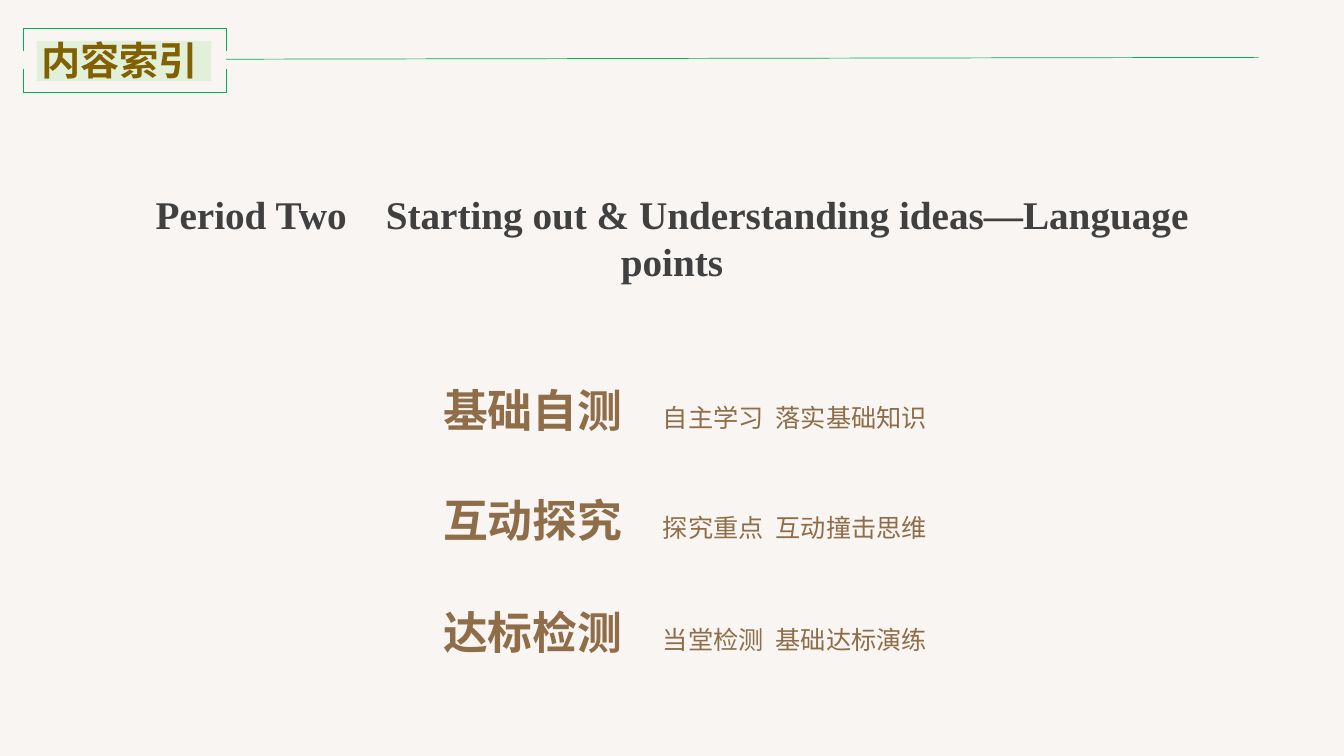
"""Build the contents slide for Period Two."""
from lxml import etree
from pptx import Presentation
from pptx.dml.color import RGBColor
from pptx.enum.shapes import MSO_CONNECTOR, MSO_SHAPE
from pptx.enum.text import MSO_ANCHOR, MSO_AUTO_SIZE, PP_ALIGN
from pptx.oxml.ns import qn
from pptx.util import Pt

STRAIGHT = MSO_CONNECTOR.STRAIGHT
RECTANGLE = MSO_SHAPE.RECTANGLE
TOP = MSO_ANCHOR.TOP
GROW = MSO_AUTO_SIZE.SHAPE_TO_FIT_TEXT
CENTER = PP_ALIGN.CENTER

COLORS = {
    "background": "F8F5F3",
    "title": "404040",
    "section": "8E6D48",
    "header": "806000",
    "highlight": "E2F0D9",
    "line": "00B050",
}
CHINESE_FONT = "Noto Sans CJK SC"


def add_run(paragraph, text, font_name, size, color, bold):
    """Append a formatted run with a Chinese font."""
    run = paragraph.add_run()
    run.text = text
    formats = {"name": font_name, "size": Pt(size), "bold": bold}
    for attribute, value in formats.items():
        setattr(run.font, attribute, value)
    run.font.color.rgb = RGBColor.from_string(COLORS[color])
    east_asian = etree.SubElement(run.font._element, qn("a:ea"))
    east_asian.set("typeface", CHINESE_FONT)


def add_text_box(left, top, width, height):
    """Add a wrapping text box and return its first paragraph."""
    box = slide.shapes.add_textbox(Pt(left), Pt(top), Pt(width), Pt(height))
    box.text_frame.word_wrap = True
    box.text_frame.auto_size = GROW
    return box.text_frame.paragraphs[0]


presentation = Presentation()
presentation.slide_width = Pt(960)
presentation.slide_height = Pt(540)
slide = presentation.slides.add_slide(presentation.slide_layouts[5])
slide.background.fill.solid()
slide.background.fill.fore_color.rgb = RGBColor.from_string(COLORS["background"])

title = slide.shapes.title
title_box = {"left": 66, "top": 132.5, "width": 828, "height": 41}
for attribute, value in title_box.items():
    setattr(title, attribute, Pt(value))
title_frame = title.text_frame
title_formats = {"word_wrap": True, "auto_size": GROW, "vertical_anchor": TOP}
for attribute, value in title_formats.items():
    setattr(title_frame, attribute, value)
title_paragraph = title_frame.paragraphs[0]
title_paragraph.alignment = CENTER
add_run(
    title_paragraph,
    "Period Two Starting out & Understanding ideas—Language points".replace("Two ", "Two　"),
    "Times New Roman", 28, "title", True,
)

sections = [
    (270, "基础自测", "自主学习", "落实基础知识"),
    (348.5, "互动探究", "探究重点", "互动撞击思维"),
    (428.5, "达标检测", "当堂检测", "基础达标演练"),
]
for top, name, method, goal in sections:
    paragraph = add_text_box(309.5, top, 390, 46)
    tab_list = etree.SubElement(paragraph._p.get_or_add_pPr(), qn("a:tabLst"))
    for position in (157, 237.5):
        tab = etree.SubElement(tab_list, qn("a:tab"))
        tab.set("pos", str(Pt(position)))
        tab.set("algn", "l")
    add_run(paragraph, f"{name}\t", "Arial", 32, "section", True)
    add_run(paragraph, f"{method}\t{goal}", "Arial", 18, "section", False)

highlight = slide.shapes.add_shape(RECTANGLE, Pt(26.3), Pt(29.2), Pt(124.6), Pt(28.8))
highlight.shadow.inherit = False
highlight.fill.solid()
highlight.fill.fore_color.rgb = RGBColor.from_string(COLORS["highlight"])
highlight.line.fill.background()

add_run(add_text_box(22.3, 22.3, 186, 41), "内容索引", CHINESE_FONT, 28, "header", True)

frame_left, frame_right = 16.5, 162
frame_top, gap_top, gap_bottom, frame_bottom = 20.2, 36.6, 49.2, 66.2
lines = [(161.5, 42.3, 899, 41, 0.5)]
for y in (frame_top, frame_bottom):
    lines.append((frame_left, y, frame_right, y, 0.75))
for x in (frame_left, frame_right):
    lines.append((x, frame_top, x, gap_top, 0.75))
    lines.append((x, gap_bottom, x, frame_bottom, 0.75))
for start_x, start_y, end_x, end_y, line_width in lines:
    connector = slide.shapes.add_connector(
        STRAIGHT, Pt(start_x), Pt(start_y), Pt(end_x), Pt(end_y)
    )
    connector.line.color.rgb = RGBColor.from_string(COLORS["line"])
    connector.line.width = Pt(line_width)
    etree.SubElement(connector._element.spPr, qn("a:effectLst"))

presentation.save("out.pptx")
